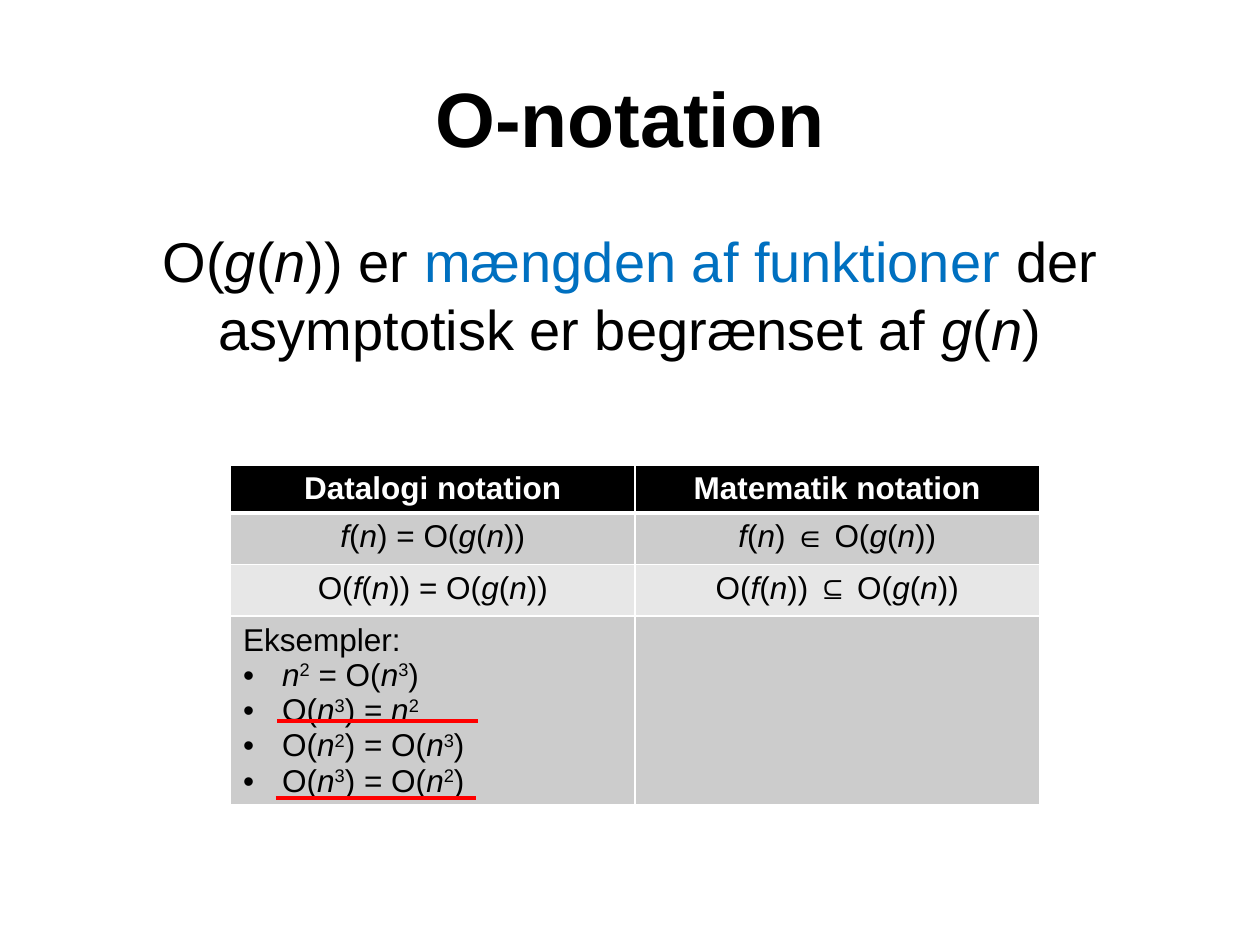
from lxml import etree
from pptx import Presentation
from pptx.dml.color import RGBColor
from pptx.enum.shapes import MSO_CONNECTOR
from pptx.enum.text import MSO_ANCHOR, PP_ALIGN
from pptx.oxml.ns import qn
from pptx.util import Inches, Pt

CENTER, LEFT = PP_ALIGN.CENTER, PP_ALIGN.LEFT
MIDDLE = MSO_ANCHOR.MIDDLE
STRAIGHT = MSO_CONNECTOR.STRAIGHT

COLORS = {
    "text": "000000",
    "inverse": "FFFFFF",
    "accent": "0070C0",
    "header": "000000",
    "odd": "CCCCCC",
    "even": "E7E7E7",
    "border": "FFFFFF",
    "mistake": "FF0000",
}
TITLE_FORMAT = {"size": Pt(44), "bold": True}
STATEMENT_FORMAT = {"size": Pt(32)}
HEADER_FORMAT = {"size": Pt(18), "bold": True}
CELL_FORMAT = {"size": Pt(18), "bold": False}

# In all wording: * toggles italic, ^ superscript and ~ the accent colour.
STATEMENT = ("O(*g*(*n*)) er ~mængden af funktioner~ der "
             "asymptotisk er begrænset af *g*(*n*)")
EXAMPLES = [
    "*n*^2^ = O(*n*^3^)",
    "O(*n*^3^) = *n*^2^",
    "O(*n*^2^) = O(*n*^3^)",
    "O(*n*^3^) = O(*n*^2^)",
]
NOTATIONS = [
    ["Datalogi notation", "Matematik notation"],
    ["*f*(*n*) = O(*g*(*n*))", "*f*(*n*) ∈ O(*g*(*n*))"],
    ["O(*f*(*n*)) = O(*g*(*n*))", "O(*f*(*n*)) ⊆ O(*g*(*n*))"],
    ["Eksempler:", ""],
]
ROW_HEIGHTS = [0.37, 0.41, 0.41, 1.48]


def rgb(name):
    return RGBColor.from_string(COLORS[name])


def split_markup(marked):
    """Yield (piece, active marks) for each evenly styled piece."""
    active, piece = set(), ""
    for char in marked:
        if char in "*^~":
            if piece:
                yield piece, set(active)
            active ^= {char}
            piece = ""
        else:
            piece += char
    if piece:
        yield piece, active


class SlideBuilder:
    font = "Arial"
    bullet_indent = Inches(0.31)

    def __init__(self, slide):
        self.slide = slide

    def add_text(self, paragraph, marked, formats, color="text", align=CENTER):
        paragraph.alignment = align
        for piece, marks in split_markup(marked):
            run = paragraph.add_run()
            run.text = piece
            run.font.name = self.font
            run.font.italic = "*" in marks
            run.font.color.rgb = rgb("accent" if "~" in marks else color)
            for name, value in formats.items():
                setattr(run.font, name, value)
            if "^" in marks:
                run.font._element.set("baseline", "30000")

    def set_bullet(self, paragraph, char=None):
        """Give the paragraph a hanging bullet, or none without a char."""
        props = paragraph._p.get_or_add_pPr()
        indent = self.bullet_indent if char else 0
        props.set("marL", str(indent))
        props.set("indent", str(-indent))
        if char:
            etree.SubElement(props, qn("a:buFont")).set("typeface", self.font)
            etree.SubElement(props, qn("a:buChar")).set("char", char)
        else:
            etree.SubElement(props, qn("a:buNone"))

    def placeholder(self, index, box, marked, formats):
        holder = self.slide.placeholders[index]
        for side, value in zip(("left", "top", "width", "height"), box):
            setattr(holder, side, Inches(value))
        paragraph = holder.text_frame.paragraphs[0]
        self.add_text(paragraph, marked, formats)
        return holder

    def borders(self, cell, bottom):
        props = cell._tc.get_or_add_tcPr()
        widths = {"L": Pt(1), "R": Pt(1), "T": Pt(1), "B": bottom}
        for side, width in widths.items():
            line = etree.SubElement(props, qn(f"a:ln{side}"), w=str(width))
            fill = etree.SubElement(line, qn("a:solidFill"))
            etree.SubElement(fill, qn("a:srgbClr")).set("val", COLORS["border"])

    def table(self, left, top, width, rows, heights):
        frame = self.slide.shapes.add_table(
            len(rows), len(rows[0]), Inches(left), Inches(top),
            Inches(width), Inches(sum(heights)))
        table = frame.table
        for row_index, (entries, height) in enumerate(zip(rows, heights)):
            table.rows[row_index].height = Inches(height)
            is_header = row_index == 0
            band = "header" if is_header else ("even", "odd")[row_index % 2]
            for column_index, entry in enumerate(entries):
                cell = table.cell(row_index, column_index)
                self.borders(cell, Pt(3) if is_header else Pt(1))
                cell.fill.solid()
                cell.fill.fore_color.rgb = rgb(band)
                self.add_text(cell.text_frame.paragraphs[0], entry,
                              HEADER_FORMAT if is_header else CELL_FORMAT,
                              "inverse" if is_header else "text")
        return table

    def bullets(self, cell, items):
        """Add a bulleted list below the cell's heading."""
        cell.text_frame.paragraphs[0].alignment = LEFT
        for item in items:
            paragraph = cell.text_frame.add_paragraph()
            self.add_text(paragraph, item, CELL_FORMAT, align=LEFT)
            self.set_bullet(paragraph, "•")

    def underline(self, left, top, width):
        line = self.slide.shapes.add_connector(
            STRAIGHT, Inches(left), Inches(top),
            Inches(left + width), Inches(top))
        line.line.color.rgb = rgb("mistake")
        line.line.width = Pt(2.25)
        etree.SubElement(line._element.spPr, qn("a:effectLst"))


def main():
    deck = Presentation()
    deck.slide_width, deck.slide_height = Inches(10), Inches(7.5)
    builder = SlideBuilder(deck.slides.add_slide(deck.slide_layouts[1]))

    title = builder.placeholder(0, (0.5, 0.3, 9, 1.25), "O-notation",
                                TITLE_FORMAT)
    title.text_frame.vertical_anchor = MIDDLE
    statement = builder.placeholder(1, (0.5, 1.75, 9, 1.25), STATEMENT,
                                    STATEMENT_FORMAT)
    builder.set_bullet(statement.text_frame.paragraphs[0])

    notations = builder.table(1.83, 3.69, 6.42, NOTATIONS, ROW_HEIGHTS)
    builder.bullets(notations.cell(3, 0), EXAMPLES)
    for left, top in ((2.2, 5.72), (2.19, 6.33)):
        builder.underline(left, top, 1.59)

    deck.save("out.pptx")


if __name__ == "__main__":
    main()
